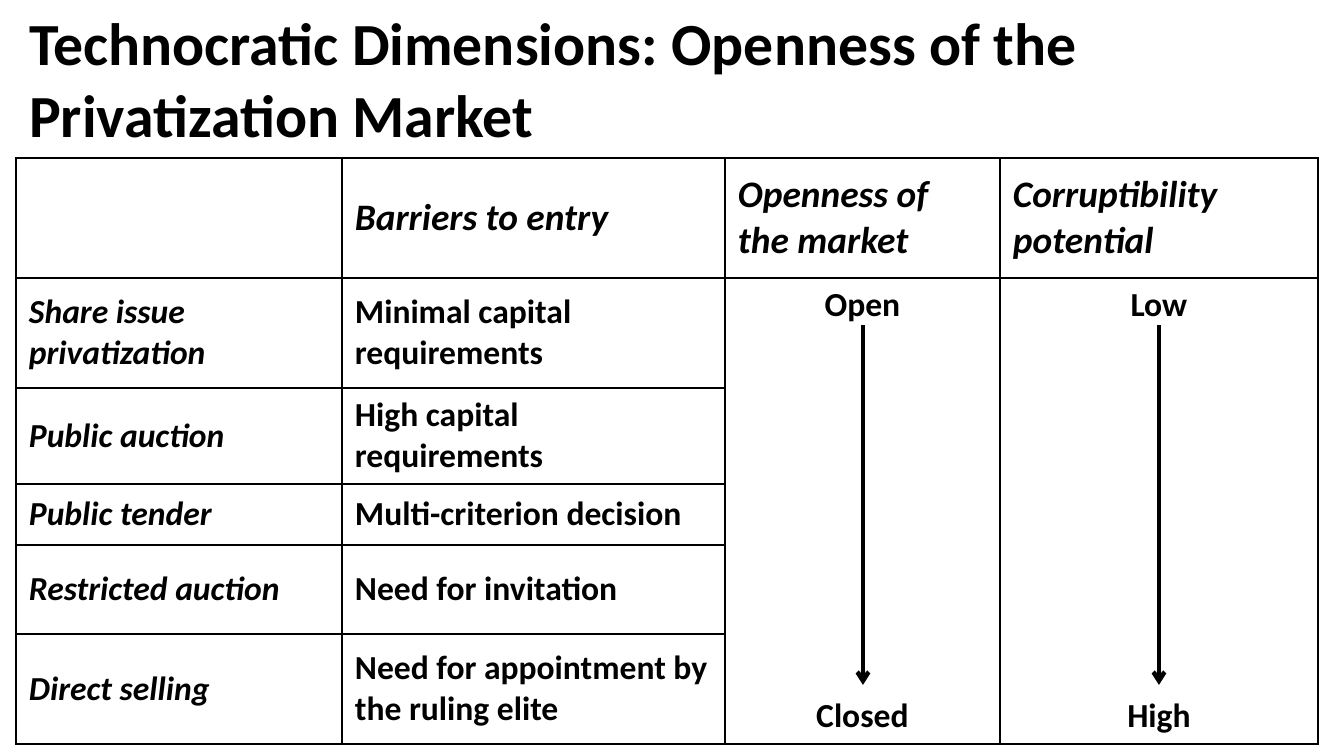
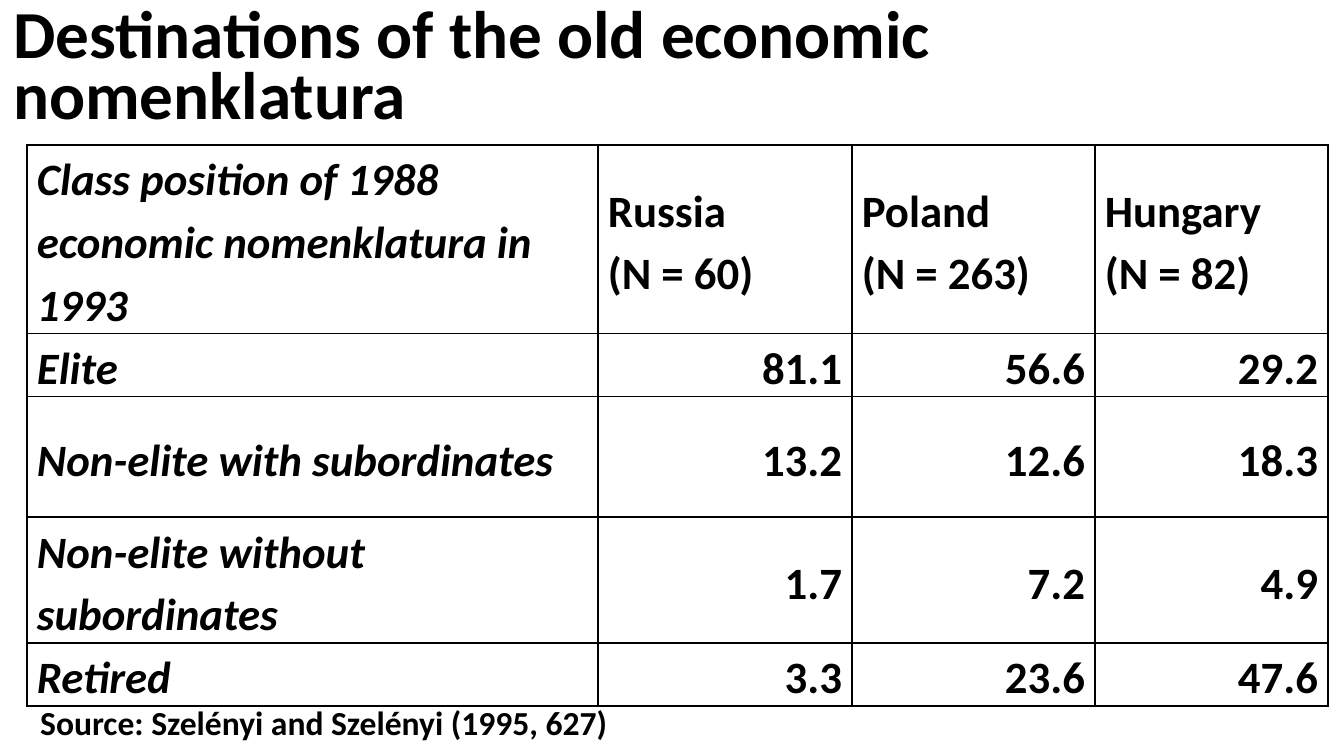
"""Build two table slides on privatization markets and the old nomenklatura."""
import lxml.etree
import pptx
import pptx.dml.color
import pptx.enum.shapes
import pptx.enum.text
import pptx.oxml
import pptx.oxml.ns
import pptx.util

PX = 914400 / 134.4
FONT = "Calibri"
COLORS = {"ink": "000000", "paper": "FFFFFF"}
ALIGN = pptx.enum.text.PP_ALIGN
ANCHOR = pptx.enum.text.MSO_ANCHOR
qn = pptx.oxml.ns.qn


def write(paragraph, text, size, italic=False, align=ALIGN.LEFT, spacing=None):
    """Write bold runs into a paragraph, with a line break at each newline."""
    paragraph.alignment = align
    if spacing:
        paragraph.line_spacing = spacing
    for number, line in enumerate(text.split("\n")):
        if number:
            paragraph.add_line_break()
        run = paragraph.add_run()
        run.text = line
        run.font.name = FONT
        run.font.size = pptx.util.Pt(size)
        run.font.bold = True
        run.font.italic = italic
        run.font.color.rgb = pptx.dml.color.RGBColor.from_string(COLORS["ink"])


def add_grid(slide, left, top, widths, heights, margins):
    """Add an unfilled table with thin borders round every cell."""
    box = [round(value * PX) for value in (left, top, sum(widths), sum(heights))]
    table = slide.shapes.add_table(len(heights), len(widths), *box).table
    table.first_row = table.horz_banding = False
    for column, width in zip(table.columns, widths):
        column.width = round(width * PX)
    for row, height in zip(table.rows, heights):
        row.height = round(height * PX)
    for cell in table.iter_cells():
        cell.margin_left = cell.margin_right = round(margins[0] * PX)
        cell.margin_top = cell.margin_bottom = round(margins[1] * PX)
        cell.vertical_anchor = ANCHOR.MIDDLE
        properties = cell._tc.get_or_add_tcPr()
        for side in ("a:lnL", "a:lnR", "a:lnT", "a:lnB"):
            border = lxml.etree.SubElement(properties, qn(side), w="12700")
            fill = lxml.etree.SubElement(border, qn("a:solidFill"))
            lxml.etree.SubElement(fill, qn("a:srgbClr"), val=COLORS["ink"])
        cell.fill.background()
    return table


presentation = pptx.Presentation()
presentation.slide_width = round(1344 * PX)
presentation.slide_height = round(756 * PX)
slides = []
for _ in range(2):
    slide = presentation.slides.add_slide(presentation.slide_layouts[6])
    slide.background.fill.solid()
    slide.background.fill.fore_color.rgb = pptx.dml.color.RGBColor.from_string(COLORS["paper"])
    slides.append(slide)
market_slide, destination_slide = slides

texts = [
    (market_slide, (16, 19, 1306, 117), 32, None, ANCHOR.MIDDLE,
     "Technocratic Dimensions: Openness of the Privatization Market"),
    (destination_slide, (0, 8, 1344, 126), 36, 0.75, ANCHOR.MIDDLE,
     "Destinations of the old economic nomenklatura"),
    (destination_slide, (27, 695, 868, 54), 18, None, ANCHOR.TOP,
     "Source: Szelényi and Szelényi (1995, 627)"),
]
for slide, box, size, spacing, anchor, text in texts:
    frame = slide.shapes.add_textbox(*[round(value * PX) for value in box]).text_frame
    frame.word_wrap = True
    frame.auto_size = pptx.enum.text.MSO_AUTO_SIZE.NONE
    frame.vertical_anchor = anchor
    write(frame.paragraphs[0], text, size, spacing=spacing)

market_headers = ["Barriers to entry", "Openness of the market", "Corruptibility potential"]
market_rows = [
    ("Share issue privatization", "Minimal capital requirements"),
    ("Public auction", "High capital requirements"),
    ("Public tender", "Multi-criterion decision"),
    ("Restricted auction", "Need for invitation"),
    ("Direct selling", "Need for appointment by the ruling elite"),
]
market_table = add_grid(market_slide, 16, 158, [326, 383, 275, 318],
                        [120, 110, 89, 61, 89, 110], (13, 7))
for column, header in enumerate(market_headers, 1):
    write(market_table.cell(0, column).text_frame.paragraphs[0], header, 20, italic=True)
for row, (method, barrier) in enumerate(market_rows, 1):
    write(market_table.cell(row, 0).text_frame.paragraphs[0], method, 18, italic=True)
    write(market_table.cell(row, 1).text_frame.paragraphs[0], barrier, 18)

scales = [(2, "Open", "Closed", 863), (3, "Low", "High", 1159)]
for column, start, end, center in scales:
    cell = market_table.cell(1, column)
    cell.merge(market_table.cell(5, column))
    cell.vertical_anchor = ANCHOR.TOP
    write(cell.text_frame.paragraphs[0], start, 18, align=ALIGN.CENTER)
    last = cell.text_frame.add_paragraph()
    last.space_before = pptx.util.Pt(198)
    write(last, end, 18, align=ALIGN.CENTER)
    points = [round(value * PX) for value in (center, 325, center, 685)]
    arrow = market_slide.shapes.add_connector(pptx.enum.shapes.MSO_CONNECTOR.STRAIGHT, *points)
    arrow.line.width = pptx.util.Pt(2.25)
    arrow.line.color.rgb = pptx.dml.color.RGBColor.from_string(COLORS["ink"])
    lxml.etree.SubElement(arrow.line._get_or_add_ln(), qn("a:tailEnd"), type="arrow")
    lxml.etree.SubElement(arrow._element.spPr, qn("a:effectLst"))

destination_rows = [
    ("Class position of 1988 economic nomenklatura in 1993",
     "Russia\n(N = 60)", "Poland\n(N = 263)", "Hungary\n(N = 82)"),
    ("Elite", "81.1", "56.6", "29.2"),
    ("Non-elite with subordinates", "13.2", "12.6", "18.3"),
    ("Non-elite without subordinates", "1.7", "7.2", "4.9"),
    ("Retired", "3.3", "23.6", "47.6"),
]
destination_table = add_grid(destination_slide, 27, 145, [571, 254, 243, 233],
                             [183, 58, 121, 121, 58], (10, 0))
for row, values in enumerate(destination_rows):
    for column, value in enumerate(values):
        align = ALIGN.RIGHT if row and column else ALIGN.LEFT
        write(destination_table.cell(row, column).text_frame.paragraphs[0], value, 24,
              italic=column == 0, align=align, spacing=1.15)

presentation.save("out.pptx")
